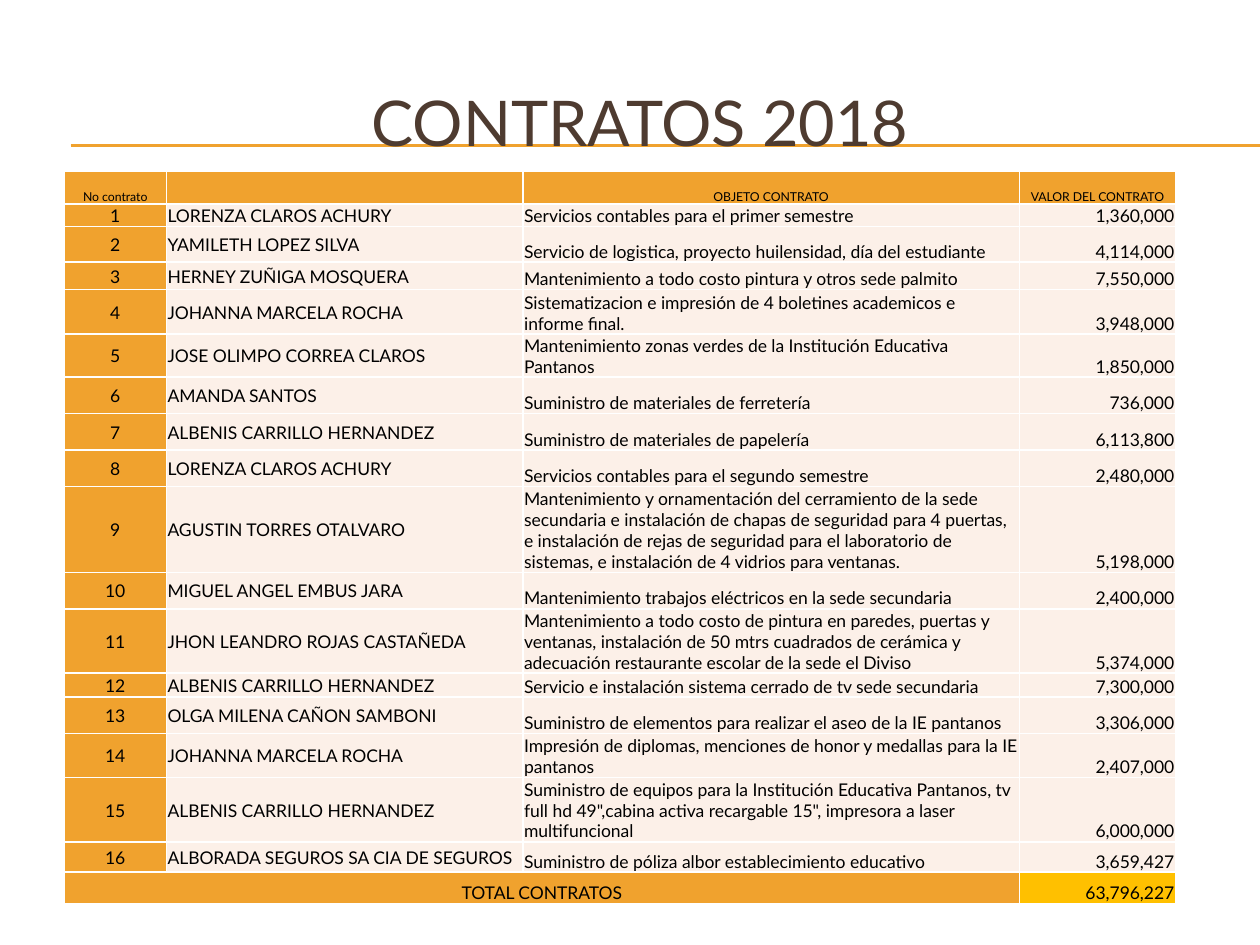
from lxml.etree import SubElement
from pptx import Presentation
from pptx.dml.color import RGBColor as Rgb
from pptx.enum.shapes import MSO_CONNECTOR as Connector
from pptx.enum.text import MSO_ANCHOR as Anchor, MSO_AUTO_SIZE as AutoSize, PP_ALIGN as Align
from pptx.oxml.ns import qn
from pptx.util import Inches, Pt

COLORS = {"accent": "F0A22E", "row": "FCF0E8", "total": "FFC000",
          "title": "4E3B30", "text": "000000", "border": "FFFFFF"}
COLUMN_WIDTHS = [0.81, 2.83, 3.94, 1.24]
ROW_HEIGHTS = [0.26, 0.18, 0.28, 0.22, 0.35, 0.32, 0.29, 0.29, 0.29,
               0.68, 0.29, 0.48, 0.19, 0.29, 0.35, 0.5, 0.24, 0.25]
HEADERS = ["No contrato", "", "OBJETO CONTRATO", "VALOR DEL CONTRATO"]
CONTRACTS = [
    ("LORENZA CLAROS ACHURY", "Servicios contables para el primer semestre", "1,360,000"),
    ("YAMILETH LOPEZ SILVA",
     "Servicio de logistica, proyecto huilensidad, día del estudiante", "4,114,000"),
    ("HERNEY ZUÑIGA MOSQUERA",
     "Mantenimiento a todo costo pintura y otros sede palmito", "7,550,000"),
    ("JOHANNA MARCELA ROCHA",
     "Sistematizacion e impresión de 4 boletines academicos e informe final.", "3,948,000"),
    ("JOSE OLIMPO CORREA CLAROS",
     "Mantenimiento zonas verdes de la Institución Educativa Pantanos", "1,850,000"),
    ("AMANDA SANTOS", "Suministro de materiales de ferretería", "736,000"),
    ("ALBENIS CARRILLO HERNANDEZ", "Suministro de materiales de papelería", "6,113,800"),
    ("LORENZA CLAROS ACHURY", "Servicios contables para el segundo semestre", "2,480,000"),
    ("AGUSTIN TORRES OTALVARO",
     "Mantenimiento y ornamentación del cerramiento de la sede secundaria e instalación "
     "de chapas de seguridad para 4 puertas, e instalación de rejas de seguridad para el "
     "laboratorio de sistemas, e instalación de 4 vidrios para ventanas.", "5,198,000"),
    ("MIGUEL ANGEL EMBUS JARA",
     "Mantenimiento trabajos eléctricos en la sede secundaria", "2,400,000"),
    ("JHON LEANDRO ROJAS CASTAÑEDA",
     "Mantenimiento a todo costo de pintura en paredes, puertas y ventanas, instalación "
     "de 50 mtrs cuadrados de cerámica y adecuación restaurante escolar de la sede el Diviso",
     "5,374,000"),
    ("ALBENIS CARRILLO HERNANDEZ",
     "Servicio e instalación sistema cerrado de tv sede secundaria", "7,300,000"),
    ("OLGA MILENA CAÑON SAMBONI",
     "Suministro de elementos para realizar el aseo de la IE pantanos", "3,306,000"),
    ("JOHANNA MARCELA ROCHA",
     "Impresión de diplomas, menciones de honor y medallas para la IE pantanos", "2,407,000"),
    ("ALBENIS CARRILLO HERNANDEZ",
     "Suministro de equipos para la Institución Educativa Pantanos, tv full hd 49\","
     "cabina activa recargable 15\", impresora a laser multifuncional", "6,000,000"),
    ("ALBORADA SEGUROS SA CIA DE SEGUROS",
     "Suministro de póliza albor establecimiento educativo", "3,659,427"),
]


def write_text(frame, text, size=10, color="text", align=Align.LEFT, font="Lato"):
    paragraph = frame.paragraphs[0]
    paragraph.alignment = align
    if not text:
        paragraph._p.get_or_add_endParaRPr().set("sz", str(size * 100))
        return
    run = paragraph.add_run()
    run.text = text
    run.font.name = font
    run.font.size = Pt(size)
    run.font.color.rgb = Rgb.from_string(COLORS[color])


class SlideBuilder:
    def __init__(self, slide, font="Lato"):
        self.slide = slide
        self.font = font

    def title(self, text, left, top, width, height):
        title = self.slide.shapes.title
        title.left, title.top = Inches(left), Inches(top)
        title.width, title.height = Inches(width), Inches(height)
        frame = title.text_frame
        frame.word_wrap = True
        frame.auto_size = AutoSize.NONE
        frame.vertical_anchor = Anchor.MIDDLE
        write_text(frame, text, size=36, color="title", align=Align.CENTER, font=self.font)

    def rule(self, left, right, y):
        rule = self.slide.shapes.add_connector(
            Connector.STRAIGHT, Inches(left), Inches(y), Inches(right), Inches(y))
        rule.line.color.rgb = Rgb.from_string(COLORS["accent"])
        rule.line.width = Pt(0.75)
        SubElement(rule._element.spPr, qn("a:effectLst"))
        self.slide.shapes._spTree.insert(2, rule._element)

    def table(self, left, top, column_widths, row_heights):
        table = self.slide.shapes.add_table(
            len(row_heights), len(column_widths), Inches(left), Inches(top),
            Inches(sum(column_widths)), Inches(sum(row_heights))).table
        for column, width in zip(table.columns, column_widths):
            column.width = Inches(width)
        for row, height in zip(table.rows, row_heights):
            row.height = Inches(height)
        return table

    def cell(self, cell, text, fill="row", anchor=Anchor.BOTTOM, **text_format):
        cell.margin_left = cell.margin_right = cell.margin_top = Inches(0.01)
        cell.margin_bottom = 0
        cell.vertical_anchor = anchor
        properties = cell._tc.get_or_add_tcPr()
        for side in ("a:lnL", "a:lnR", "a:lnT", "a:lnB"):
            border = SubElement(properties, qn(side), w=str(Pt(1)))
            solid = SubElement(border, qn("a:solidFill"))
            SubElement(solid, qn("a:srgbClr"), val=COLORS["border"])
        cell.fill.solid()
        cell.fill.fore_color.rgb = Rgb.from_string(COLORS[fill])
        write_text(cell.text_frame, text, font=self.font, **text_format)


def main():
    deck = Presentation()
    deck.slide_width, deck.slide_height = Inches(10), Inches(7.5)
    page = SlideBuilder(deck.slides.add_slide(deck.slide_layouts[5]))
    page.title("CONTRATOS 2018", 0.33, 0.5, 9.5, 0.92)
    for y in (1.15, 1.16):
        page.rule(0.56, 10, y)

    contracts = page.table(0.51, 1.36, COLUMN_WIDTHS, ROW_HEIGHTS)
    for column, header in enumerate(HEADERS):
        page.cell(contracts.cell(0, column), header, fill="accent", size=7, align=Align.CENTER)

    for number, (contractor, purpose, value) in enumerate(CONTRACTS, 1):
        value_anchor = Anchor.MIDDLE if number == 1 else Anchor.BOTTOM
        page.cell(contracts.cell(number, 0), str(number), fill="accent",
                  anchor=Anchor.MIDDLE, align=Align.CENTER)
        page.cell(contracts.cell(number, 1), contractor, anchor=Anchor.MIDDLE)
        page.cell(contracts.cell(number, 2), purpose)
        page.cell(contracts.cell(number, 3), value, anchor=value_anchor, align=Align.RIGHT)

    total_row = len(CONTRACTS) + 1
    contracts.cell(total_row, 0).merge(contracts.cell(total_row, 2))
    for column, label in enumerate(["TOTAL CONTRATOS", "", ""]):
        page.cell(contracts.cell(total_row, column), label, fill="accent", align=Align.CENTER)
    page.cell(contracts.cell(total_row, 3), "63,796,227", fill="total", align=Align.RIGHT)

    deck.save("out.pptx")


if __name__ == "__main__":
    main()
